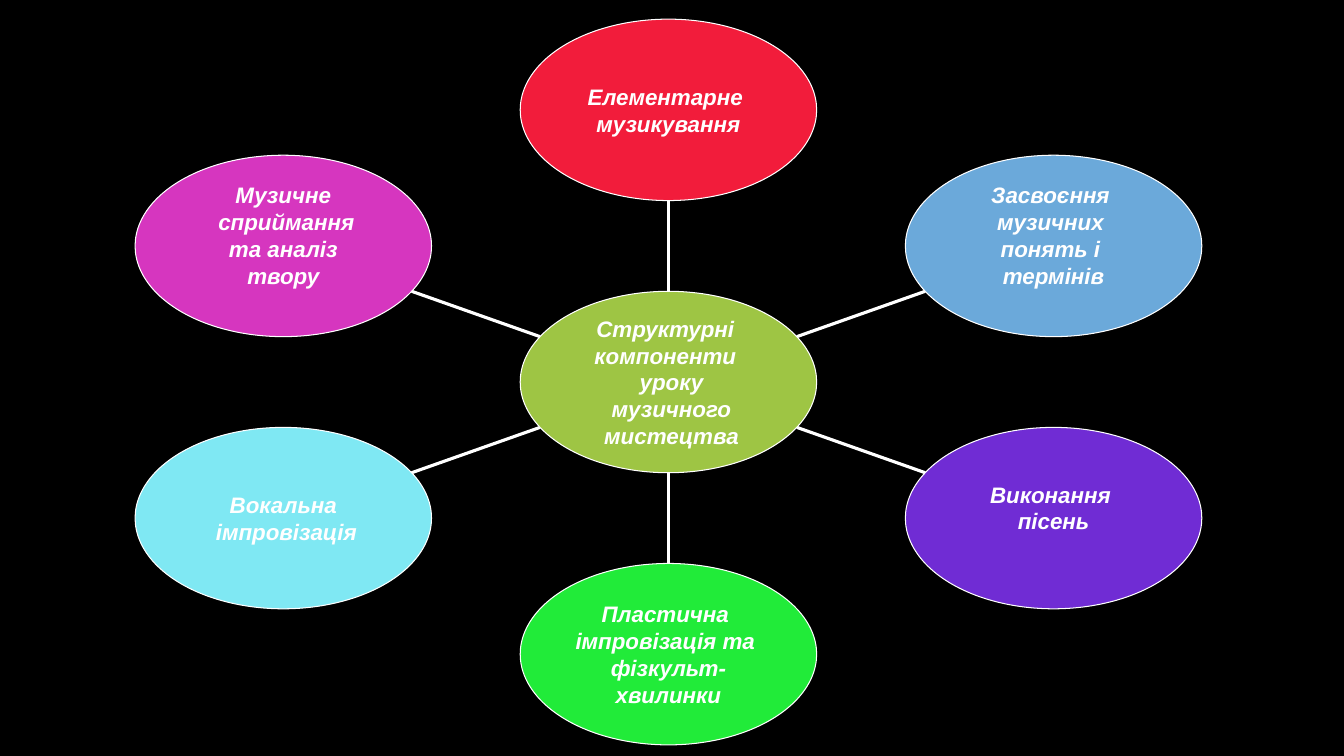
from lxml import etree
from pptx import Presentation
from pptx.dml.color import RGBColor
from pptx.enum.shapes import MSO_CONNECTOR, MSO_SHAPE
from pptx.enum.text import MSO_ANCHOR, PP_ALIGN
from pptx.oxml.ns import qn
from pptx.util import Inches, Pt

OVAL = MSO_SHAPE.OVAL
LINE = MSO_CONNECTOR.STRAIGHT
MIDDLE = MSO_ANCHOR.MIDDLE
CENTER = PP_ALIGN.CENTER

FONT = "Arial"
WHITE = "FFFFFF"
WIDE, HIGH = 2.94, 1.8      # size of every oval
STEP_X, STEP_Y = 3.82, 1.35  # grid of the oval centres
LIFT = 0.21                 # bottom inset that raises some labels

HUB = ("9EC544", ["Структурні ", "компоненти ", " уроку",
                  " музичного", " мистецтва"])

# column, row, fill, bottom inset, label lines
TOPICS = [
    (-1, -1, "D636BF", LIFT,
     ["Музичне", " сприймання", " та аналіз ", "твору"]),
    (-1, 1, "7FE8F3", 0, ["Вокальна", " імпровізація"]),
    (0, 2, "21EB39", 0,
     ["Пластична ", "імпровізація та ", "фізкульт-", "хвилинки"]),
    (1, 1, "702CD4", LIFT, ["Виконання ", "пісень"]),
    (1, -1, "6BA9DA", LIFT,
     ["Засвоєння ", "музичних ", "понять і ", "термінів"]),
    (0, -2, "F21C3B", 0, ["Елементарне ", "музикування"]),
]


def color(text):
    return RGBColor.from_string(text)


def add_label(frame, lines, inset):
    frame.word_wrap = False
    frame.vertical_anchor = MIDDLE
    frame.margin_left = frame.margin_right = frame.margin_top = 0
    frame.margin_bottom = Inches(inset)
    for i, line in enumerate(lines):
        para = frame.add_paragraph() if i else frame.paragraphs[0]
        para.alignment = CENTER
        run = para.add_run()
        run.text = line
        font = run.font
        font.name, font.size = FONT, Pt(16)
        font.bold = font.italic = True
        font.color.rgb = color(WHITE)


def add_oval(slide, x, y, fill, lines, inset=0):
    """Draw an oval centred on x, y."""
    oval = slide.shapes.add_shape(
        OVAL, Inches(x - WIDE / 2), Inches(y - HIGH / 2),
        Inches(WIDE), Inches(HIGH))
    oval.shadow.inherit = False
    oval.fill.solid()
    oval.fill.fore_color.rgb = color(fill)
    oval.line.color.rgb = color(WHITE)
    oval.line.width = Pt(0.75)
    add_label(oval.text_frame, lines, inset)


def add_spoke(slide, x, y, dx, dy):
    """Draw the middle third of the way from the hub to a topic."""
    spoke = slide.shapes.add_connector(
        LINE, Inches(x + dx / 3), Inches(y + dy / 3),
        Inches(x + dx * 2 / 3), Inches(y + dy * 2 / 3))
    spoke.line.color.rgb = color(WHITE)
    spoke.line.width = Pt(2.25)
    etree.SubElement(spoke.element.spPr, qn("a:effectLst"))


def add_wheel(slide, left, top, width, height):
    """Place the hub in the middle of the box and the topics around it."""
    x, y = left + width / 2, top + height / 2
    for col, row, fill, inset, lines in TOPICS:
        dx, dy = col * STEP_X, row * STEP_Y
        add_spoke(slide, x, y, dx, dy)
        add_oval(slide, x + dx, y + dy, fill, lines, inset)
    add_oval(slide, x, y, *HUB)


def main():
    deck = Presentation()
    deck.slide_width, deck.slide_height = Inches(13.33), Inches(7.5)
    slide = deck.slides.add_slide(deck.slide_layouts[6])

    # Background
    back = slide.background.fill
    back.solid()
    back.fore_color.rgb = color("000000")

    # Diagram
    add_wheel(slide, 1.34, 0.19, 2 * STEP_X + WIDE, 4 * STEP_Y + HIGH)
    deck.save("out.pptx")


if __name__ == "__main__":
    main()
